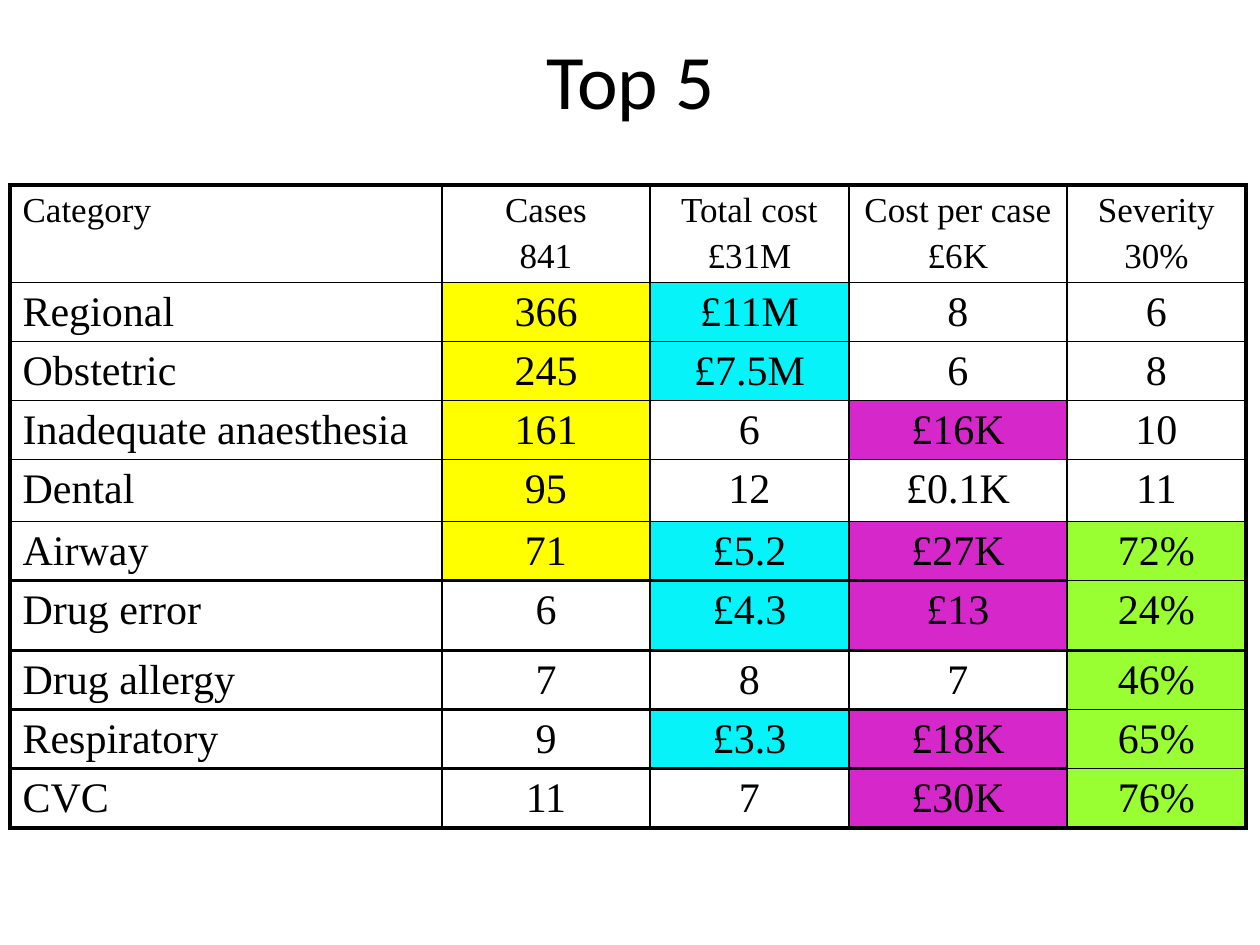
import pptx
import pptx.util
import pptx.dml.color
import pptx.enum.text
import lxml.etree

TITLE = "Top 5"
ROWS = [
    ("Category", "Cases\n841", "Total cost\n£31M", "Cost per case\n£6K", "Severity\n30%"),
    ("Regional", "366", "£11M", "8", "6"),
    ("Obstetric", "245", "£7.5M", "6", "8"),
    ("Inadequate anaesthesia", "161", "6", "£16K", "10"),
    ("Dental", "95", "12", "£0.1K", "11"),
    ("Airway", "71", "£5.2", "£27K", "72%"),
    ("Drug error", "6", "£4.3", "£13", "24%"),
    ("Drug allergy", "7", "8", "7", "46%"),
    ("Respiratory", "9", "£3.3", "£18K", "65%"),
    ("CVC", "11", "7", "£30K", "76%"),
]
TOP_FIVE = {
    1: ("FFFF00", (1, 2, 3, 4, 5)),
    2: ("05F3F9", (1, 2, 5, 6, 8)),
    3: ("D628CA", (3, 5, 6, 8, 9)),
    4: ("99FF33", (5, 6, 7, 8, 9)),
}
COLUMN_WIDTHS = [432, 208, 199, 218, 179]
ROW_HEIGHTS = [97, 59, 59, 59, 62, 59, 70, 59, 59, 59]
LAST_ROW = len(ROWS) - 1
LAST_COLUMN = len(COLUMN_WIDTHS) - 1
THICK_BELOW = (5, 6, 7, 8, 9)
THICK_BELOW_LAST_COLUMN = (6, 9)
THIN, THICK = 1, 2.25
INK = "000000"
CENTER = pptx.enum.text.PP_ALIGN.CENTER


def px(length):
    return pptx.util.Emu(round(length * 914400 / 126))


def color(value):
    return pptx.dml.color.RGBColor.from_string(value)


def add_run(paragraph, text, size, font):
    run = paragraph.add_run()
    run.text = text
    run.font.size = pptx.util.Pt(size)
    run.font.name = font
    run.font.color.rgb = color(INK)


def line_below(row, column):
    if row < 0:
        return THICK
    thick_rows = THICK_BELOW_LAST_COLUMN if column == LAST_COLUMN else THICK_BELOW
    return THICK if row in thick_rows else THIN


def set_borders(cell, row, column):
    widths = {
        "lnL": THICK if column == 0 else THIN,
        "lnR": THICK if column == LAST_COLUMN else THIN,
        "lnT": line_below(row - 1, column),
        "lnB": line_below(row, column),
    }
    namespace = "{http://schemas.openxmlformats.org/drawingml/2006/main}"
    properties = cell._tc.get_or_add_tcPr()
    for side, width in widths.items():
        line = lxml.etree.SubElement(properties, namespace + side, w=str(pptx.util.Pt(width)))
        fill = lxml.etree.SubElement(line, namespace + "solidFill")
        lxml.etree.SubElement(fill, namespace + "srgbClr", val=INK)


def fill_cell(cell, row, column):
    fill_color, marked_rows = TOP_FIVE.get(column, (None, ()))
    if row in marked_rows:
        cell.fill.solid()
        cell.fill.fore_color.rgb = color(fill_color)
    else:
        cell.fill.background()


def write_cell(cell, text, row, column):
    size = 20 if row == 0 else 24
    for index, line in enumerate(text.split("\n")):
        if index == 0:
            paragraph = cell.text_frame.paragraphs[0]
        else:
            paragraph = cell.text_frame.add_paragraph()
            paragraph.space_before = pptx.util.Pt(size * 0.2)
        if column > 0:
            paragraph.alignment = CENTER
        add_run(paragraph, line, size, "Times New Roman")


def add_title(slide):
    title = slide.shapes.title
    title.left, title.top, title.width, title.height = px(95), px(0), px(1071), px(158)
    title.text_frame.vertical_anchor = pptx.enum.text.MSO_ANCHOR.MIDDLE
    paragraph = title.text_frame.paragraphs[0]
    paragraph.alignment = CENTER
    add_run(paragraph, TITLE, 44, "Calibri")


def add_ranking_table(slide):
    table = slide.shapes.add_table(
        len(ROWS), len(COLUMN_WIDTHS), px(10), px(185), px(sum(COLUMN_WIDTHS)), px(sum(ROW_HEIGHTS))
    ).table
    table.first_row = False
    table.horz_banding = False
    for column, width in enumerate(COLUMN_WIDTHS):
        table.columns[column].width = px(width)
    for row, values in enumerate(ROWS):
        table.rows[row].height = px(ROW_HEIGHTS[row])
        for column, text in enumerate(values):
            cell = table.cell(row, column)
            set_borders(cell, row, column)
            fill_cell(cell, row, column)
            write_cell(cell, text, row, column)


def main():
    presentation = pptx.Presentation()
    presentation.slide_width = px(1260)
    presentation.slide_height = px(945)
    slide = presentation.slides.add_slide(presentation.slide_layouts[5])
    add_title(slide)
    add_ranking_table(slide)
    presentation.save("out.pptx")


if __name__ == "__main__":
    main()
